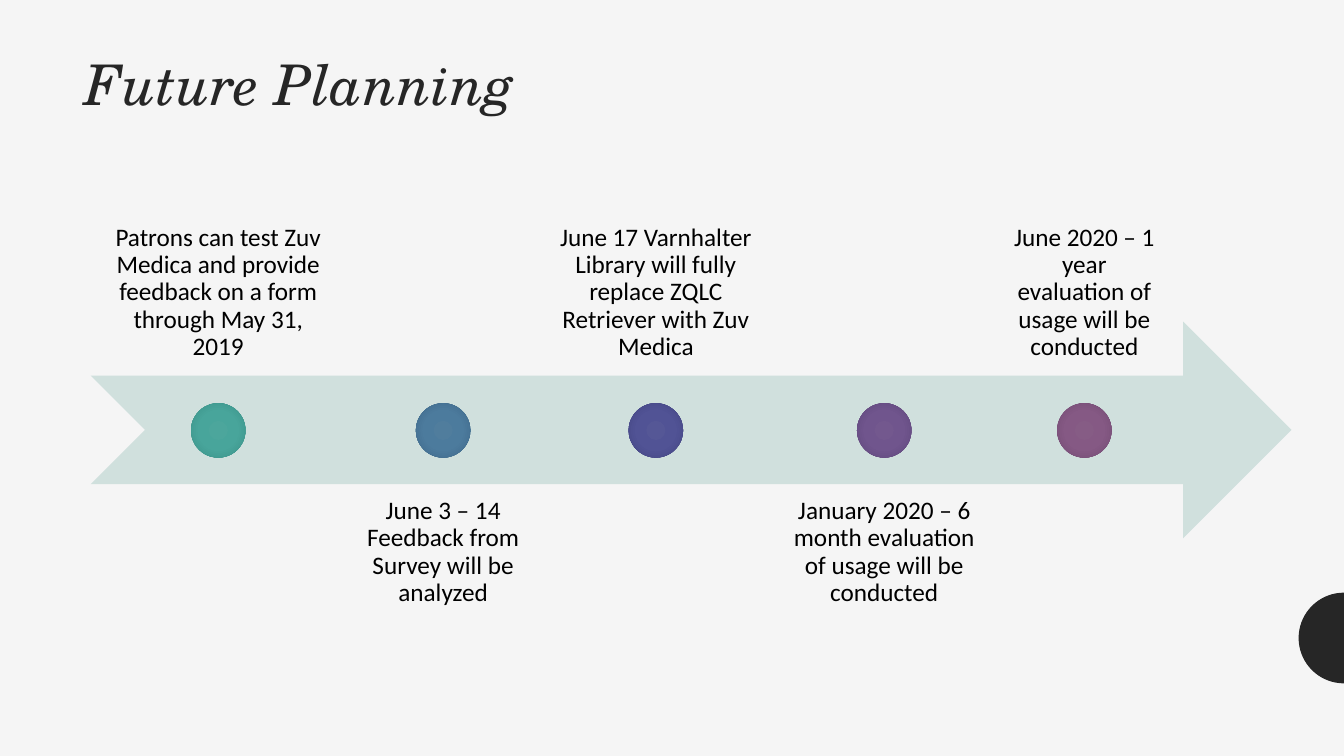
"""Build the Future Planning timeline slide."""
import math
from dataclasses import dataclass

from pptx import Presentation
from pptx import util as u
from pptx.dml.color import RGBColor
from pptx.enum import shapes, text
from pptx.oxml import parse_xml
from pptx.oxml.ns import nsdecls

PX = 9144
WIDE, HIGH = 1333, 750
PAPER = RGBColor(0xF5, 0xF5, 0xF5)
INK = RGBColor(0x26, 0x26, 0x26)
BLACK = RGBColor(0, 0, 0)
BAND = RGBColor(0xD0, 0xE0, 0xDD)
TEAL = (RGBColor(0x4C, 0xA6, 0x9C), RGBColor(0x48, 0xA5, 0x9B), RGBColor(0x39, 0x90, 0x87))
BLUE = (RGBColor(0x50, 0x7D, 0x9D), RGBColor(0x4C, 0x7B, 0x9D), RGBColor(0x3E, 0x68, 0x88))
NAVY = (RGBColor(0x55, 0x57, 0x96), RGBColor(0x51, 0x53, 0x95), RGBColor(0x42, 0x44, 0x81))
PLUM = (RGBColor(0x73, 0x58, 0x8E), RGBColor(0x70, 0x55, 0x8D), RGBColor(0x5F, 0x46, 0x7A))
ROSE = (RGBColor(0x86, 0x5C, 0x85), RGBColor(0x85, 0x59, 0x84), RGBColor(0x72, 0x4A, 0x71))
ABOVE, BELOW, TALL = 157, 480, 215
DOT, DOT_TOP = 54, 400
INSET = 14


@dataclass(frozen=True)
class Step:
    """One date on the timeline."""
    left: int
    width: int
    tones: tuple[RGBColor, ...]
    words: str


STEPS = (
    Step(91, 251, TEAL, "Patrons can test Zuv Medica and provide feedback on a form through May 31, 2019"),
    Step(349, 181, BLUE, "June 3 – 14 Feedback from Survey will be analyzed"),
    Step(538, 225, NAVY, "June 17 Varnhalter Library will fully replace ZQLC Retriever with Zuv Medica"),
    Step(771, 212, PLUM, "January 2020 – 6 month evaluation of usage will be conducted"),
    Step(990, 171, ROSE, "June 2020 – 1 year evaluation of usage will be conducted"),
)


def px(*sizes: float) -> list[u.Emu]:
    """Turn px into EMU."""
    return [u.Emu(round(size * PX)) for size in sizes]


def plain(shape, fill: RGBColor) -> None:
    """Give a shape a flat fill with no line or shadow."""
    shape.shadow.inherit = False
    shape.fill.solid()
    shape.fill.fore_color.rgb = fill
    shape.line.fill.background()


def write(frame, words: str, font: str, size: int, tint: RGBColor, align) -> None:
    """Write one run into a text frame."""
    frame.word_wrap = True
    frame.auto_size = text.MSO_AUTO_SIZE.NONE
    para = frame.paragraphs[0]
    para.alignment = align
    para.line_spacing = 0.9
    run = para.add_run()
    run.text = words
    run.font.name = font
    run.font.size = u.Pt(size)
    run.font.color.rgb = tint


def add_title(slide) -> None:
    """Place and fill the title."""
    title = slide.shapes.title
    title.left, title.top, title.width, title.height = px(74, 52, 473, 542)
    frame = title.text_frame
    frame.vertical_anchor = text.MSO_ANCHOR.TOP
    write(frame, "Future Planning", "TeX Gyre Schola", 40, INK, text.PP_ALIGN.LEFT)
    frame.paragraphs[0].runs[0].font.italic = True


def add_half(slide, mid: int, size: int) -> None:
    """Draw the half disc on the right edge."""
    turns = [math.radians(90 + 5 * n) for n in range(37)]
    spots = [px(WIDE + size * math.cos(t), mid + size * math.sin(t)) for t in turns]
    pen = slide.shapes.build_freeform(*spots[0])
    pen.add_line_segments(spots[1:], close=True)
    plain(pen.convert_to_shape(), INK)


def add_dot(slide, step: Step) -> None:
    """Draw a radially shaded dot centred on its step."""
    left = step.left + (step.width - DOT) / 2
    dot = slide.shapes.add_shape(shapes.MSO_SHAPE.OVAL, *px(left, DOT_TOP, DOT, DOT))
    plain(dot, step.tones[1])
    stops = "".join(
        f'<a:gs pos="{n * 50000}"><a:srgbClr val="{tone}"/></a:gs>'
        for n, tone in enumerate(step.tones))
    shade = parse_xml(
        f'<a:gradFill {nsdecls("a")} rotWithShape="1"><a:gsLst>{stops}</a:gsLst>'
        '<a:path path="circle"><a:fillToRect l="100000" t="100000" r="100000" b="100000"/>'
        '</a:path></a:gradFill>')
    props = dot.element.spPr
    props.replace(props.find("{*}solidFill"), shade)


def add_step(slide, step: Step, high: bool) -> None:
    """Draw the text and dot of a step."""
    top = ABOVE if high else BELOW
    box = slide.shapes.add_textbox(*px(step.left, top, step.width, TALL))
    frame = box.text_frame
    frame.margin_left, frame.margin_top, frame.margin_right, frame.margin_bottom = px(*[INSET] * 4)
    frame.vertical_anchor = text.MSO_ANCHOR.BOTTOM if high else text.MSO_ANCHOR.TOP
    write(frame, step.words, "Calibri", 18, BLACK, text.PP_ALIGN.CENTER)
    add_dot(slide, step)


def main() -> None:
    """Build and save the slide."""
    deck = Presentation()
    deck.slide_width, deck.slide_height = px(WIDE, HIGH)
    slide = deck.slides.add_slide(deck.slide_layouts[5])
    slide.background.fill.solid()
    slide.background.fill.fore_color.rgb = PAPER
    add_half(slide, 633, 45)
    add_title(slide)
    band = slide.shapes.add_shape(
        shapes.MSO_SHAPE.NOTCHED_RIGHT_ARROW, *px(90, 319, 1191, TALL))
    plain(band, BAND)
    for n, step in enumerate(STEPS):
        add_step(slide, step, n % 2 == 0)
    deck.save("out.pptx")


if __name__ == "__main__":
    main()
